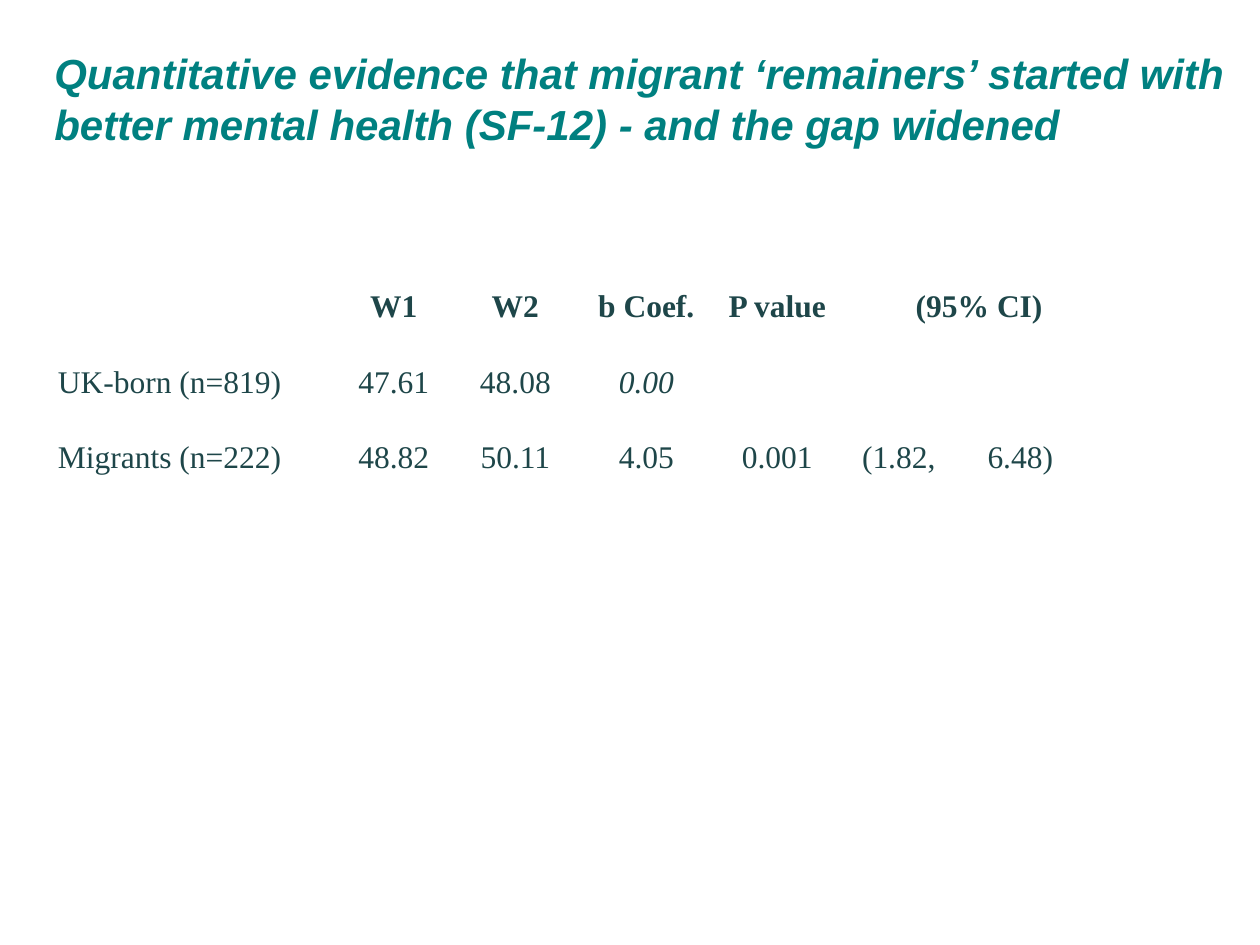
from dataclasses import dataclass

from pptx import Presentation
from pptx.dml.color import RGBColor
from pptx.enum.text import MSO_ANCHOR, MSO_AUTO_SIZE, PP_ALIGN
from pptx.util import Cm, Pt

TOP, MIDDLE = MSO_ANCHOR.TOP, MSO_ANCHOR.MIDDLE
LEFT, CENTER = PP_ALIGN.LEFT, PP_ALIGN.CENTER
NO_AUTOFIT = MSO_AUTO_SIZE.NONE
TITLE_ONLY_LAYOUT = 5


@dataclass(frozen=True)
class Theme:
    title_font: str = "Arial"
    table_font: str = "Times New Roman"
    title_color: RGBColor = RGBColor(0x00, 0x80, 0x80)
    table_color: RGBColor = RGBColor(0x1E, 0x46, 0x49)
    title_size: Pt = Pt(24)
    table_size: Pt = Pt(18)


@dataclass(frozen=True)
class Entry:
    text: str = ""
    bold: bool = False
    italic: bool = False
    span: int = 1
    indent: float = 0


THEME = Theme()
TITLE = (
    "Quantitative evidence that migrant ‘remainers’ started with "
    "better mental health (SF-12) - and the gap widened"
)
COLUMN_WIDTHS = (6.78, 2.26, 2.64, 2.64, 2.64, 2.26, 2.64)
ROW_HEIGHT = 1.52
ROWS = (
    (
        Entry(),
        *(Entry(name, bold=True) for name in ("W1", "W2", "b Coef.", "P value")),
        Entry("(95% CI)", bold=True, span=2, indent=0.6),
        Entry(),
    ),
    (
        *(Entry(text) for text in ("UK-born (n=819)", "47.61", "48.08")),
        Entry("0.00", italic=True),
        *(Entry() for _ in range(3)),
    ),
    tuple(
        Entry(text)
        for text in (
            "Migrants (n=222)", "48.82", "50.11", "4.05", "0.001", "(1.82,", "6.48)",
        )
    ),
)


def add_title(slide, text: str) -> None:
    title = slide.shapes.title
    title.left, title.top = Cm(0.84), Cm(0.84)
    title.width, title.height = Cm(24.56), Cm(3.07)
    text_frame = title.text_frame
    text_frame.text = text
    text_frame.word_wrap = True
    text_frame.auto_size = NO_AUTOFIT
    text_frame.vertical_anchor = TOP
    paragraph = text_frame.paragraphs[0]
    paragraph.alignment = LEFT
    paragraph.line_spacing = 1
    paragraph.space_before = Pt(0)
    font = paragraph.runs[0].font
    font.name, font.size = THEME.title_font, THEME.title_size
    font.color.rgb = THEME.title_color
    font.bold = font.italic = True


def write_cell(cell, entry: Entry) -> None:
    cell.fill.background()
    cell.vertical_anchor = MIDDLE
    cell.margin_left, cell.margin_right = Cm(0.18 + entry.indent), Cm(0.18)
    cell.margin_top = cell.margin_bottom = 0
    if not entry.text:
        return
    cell.text_frame.text = entry.text
    paragraph = cell.text_frame.paragraphs[0]
    paragraph.alignment = CENTER
    paragraph.line_spacing = 2
    font = paragraph.runs[0].font
    font.name, font.size = THEME.table_font, THEME.table_size
    font.color.rgb = THEME.table_color
    font.bold, font.italic = entry.bold, entry.italic


def add_results_table(slide) -> None:
    table = slide.shapes.add_table(
        len(ROWS), len(COLUMN_WIDTHS), Cm(0.03), Cm(5.08),
        Cm(sum(COLUMN_WIDTHS)), Cm(ROW_HEIGHT * len(ROWS)),
    ).table
    table.first_row = table.horz_banding = False
    for column, width in zip(table.columns, COLUMN_WIDTHS):
        column.width = Cm(width)
    for row_index, entries in enumerate(ROWS):
        table.rows[row_index].height = Cm(ROW_HEIGHT)
        for column_index, entry in enumerate(entries):
            cell = table.cell(row_index, column_index)
            if entry.span > 1:
                cell.merge(table.cell(row_index, column_index + entry.span - 1))
            write_cell(cell, entry)


def main() -> None:
    presentation = Presentation()
    presentation.slide_width, presentation.slide_height = Cm(25.4), Cm(19.05)
    slide = presentation.slides.add_slide(
        presentation.slide_layouts[TITLE_ONLY_LAYOUT]
    )
    add_results_table(slide)
    add_title(slide, TITLE)
    presentation.save("out.pptx")


if __name__ == "__main__":
    main()
